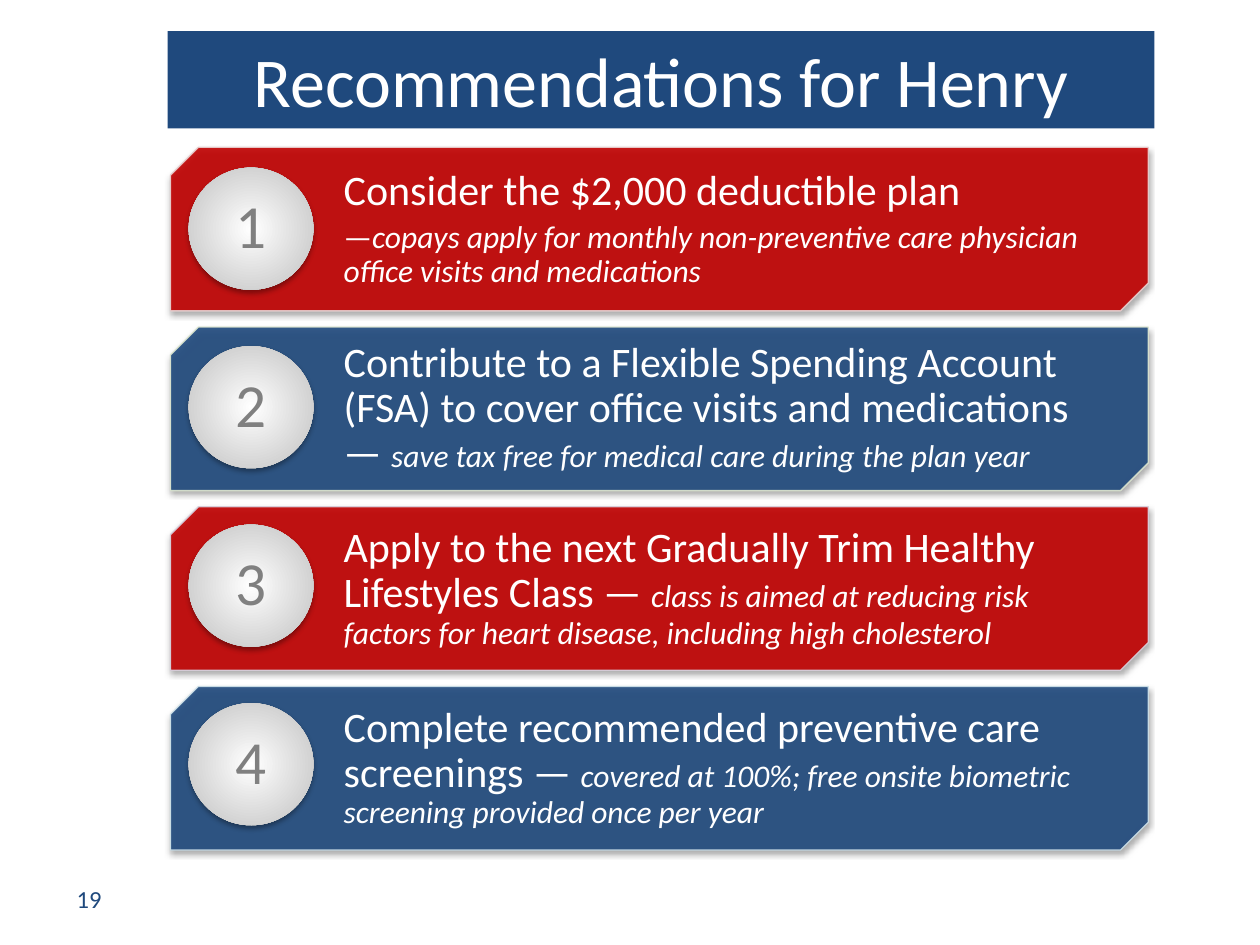
from lxml.etree import SubElement
from pptx import Presentation
from pptx.dml.color import RGBColor
from pptx.enum.shapes import MSO_SHAPE
from pptx.enum.text import MSO_ANCHOR, MSO_AUTO_SIZE, PP_ALIGN
from pptx.oxml.ns import qn
from pptx.util import Pt

NAVY = RGBColor(0x1F, 0x49, 0x7D)
RED = RGBColor(0xC0, 0x00, 0x00)
WHITE = RGBColor(0xFF, 0xFF, 0xFF)
SILVER = RGBColor(0xBF, 0xBF, 0xBF)
GRAY = RGBColor(0x80, 0x80, 0x80)
EDGES = [RGBColor(0xE8, 0xD0, 0xD0), RGBColor(0xDE, 0xE7, 0xD1),
         RGBColor(0xD8, 0xD3, 0xE0), RGBColor(0xD0, 0xE3, 0xEA)]

BIG, SMALL = 24, 18
TALL = 93.5
ADVICE = [
    [[("Consider the $2,000 deductible plan", BIG, False)],
     [("—", SMALL, False),
      ("copays apply for monthly non-preventive care physician "
       "office visits and medications", SMALL, True)]],
    [[("Contribute to a Flexible Spending Account (FSA) to cover "
       "office visits and medications — ", BIG, False),
      ("save tax free for medical care during the plan year", SMALL, True)]],
    [[("Apply to the next Gradually Trim Healthy Lifestyles Class — ",
       BIG, False),
      ("class is aimed at reducing risk factors for heart disease, "
       "including high cholesterol", SMALL, True)]],
    [[("Complete recommended preventive care screenings — ", BIG, False),
      ("covered at 100%; free onsite biometric screening provided "
       "once per year", SMALL, True)]],
]


def style(run, size, color, slant=False):
    font = run.font
    font.name = "Calibri"
    font.size = Pt(size)
    font.color.rgb = color
    font.italic = slant


def set_frame(frame):
    frame.word_wrap = True
    frame.auto_size = MSO_AUTO_SIZE.NONE
    frame.vertical_anchor = MSO_ANCHOR.MIDDLE


def label(shape, text, size, color):
    frame = shape.text_frame
    frame.text = text
    set_frame(frame)
    para = frame.paragraphs[0]
    para.alignment = PP_ALIGN.CENTER
    style(para.runs[0], size, color)


def set_alpha(parent, share):
    SubElement(parent, qn("a:alpha"), val=str(share * 1000))


def add_shadow(shape):
    shape.shadow.inherit = False
    effects = shape._element.spPr.find(qn("a:effectLst"))
    outer = SubElement(effects, qn("a:outerShdw"), blurRad=str(Pt(3.1)),
                       dist=str(Pt(1.8)), dir="5400000", rotWithShape="0")
    color = SubElement(outer, qn("a:srgbClr"), val="000000")
    set_alpha(color, 35)


def add_title(slide):
    title = slide.shapes.title
    title.left, title.top = Pt(95.8), Pt(17.8)
    title.width, title.height = Pt(563.8), Pt(55.6)
    title.fill.solid()
    title.fill.fore_color.rgb = NAVY
    label(title, "Recommendations for Henry", 40, WHITE)


def add_bar(slide, top, color, edge):
    bar = slide.shapes.add_shape(MSO_SHAPE.SNIP_2_DIAG_RECTANGLE,
                                 Pt(97.5), Pt(top), Pt(558.7), Pt(TALL))
    bar.adjustments[0], bar.adjustments[1] = 0.17, 0
    bar.fill.solid()
    bar.fill.fore_color.rgb = color
    bar.line.color.rgb = edge
    bar.line.width = Pt(0.75)
    for tone in bar._element.spPr.iter(qn("a:srgbClr")):
        set_alpha(tone, 90)
    add_shadow(bar)


def add_advice(slide, top, paras):
    box = slide.shapes.add_textbox(Pt(189.3), Pt(top), Pt(447.2), Pt(TALL))
    frame = box.text_frame
    set_frame(frame)
    for i, parts in enumerate(paras):
        para = frame.add_paragraph() if i else frame.paragraphs[0]
        para.line_spacing = 0.9
        para.space_after = Pt(4.2)
        for text, size, slant in parts:
            run = para.add_run()
            run.text = text
            style(run, size, WHITE, slant)


def add_badge(slide, top, text):
    badge = slide.shapes.add_shape(MSO_SHAPE.OVAL, Pt(107.8), Pt(top),
                                   Pt(71.3), Pt(69.8))
    badge.fill.gradient()
    for stop, color in zip(badge.fill.gradient_stops, (WHITE, SILVER)):
        stop.color.rgb = color
    grad = badge._element.spPr.find(qn("a:gradFill"))
    grad.remove(grad.find(qn("a:lin")))
    round_fill = SubElement(grad, qn("a:path"), path="circle")
    SubElement(round_fill, qn("a:fillToRect"),
               l="50000", t="50000", r="50000", b="50000")
    badge.line.fill.background()
    add_shadow(badge)
    label(badge, text, 35, GRAY)
    badge.text_frame.paragraphs[0].line_spacing = 0.9


def add_page(slide):
    box = slide.shapes.add_textbox(Pt(18), Pt(499), Pt(66), Pt(28.8))
    label(box, "19", 14, NAVY)


def main():
    deck = Presentation()
    deck.slide_width, deck.slide_height = Pt(720), Pt(540)
    slide = deck.slides.add_slide(deck.slide_layouts[5])
    add_title(slide)
    for i, paras in enumerate(ADVICE):
        top = 84.2 + 102.7 * i
        add_bar(slide, top, (RED, NAVY)[i % 2], EDGES[i])
        add_advice(slide, top, paras)
        add_badge(slide, 95.8 + 102 * i, str(i + 1))
    add_page(slide)
    deck.save("out.pptx")


if __name__ == "__main__":
    main()
